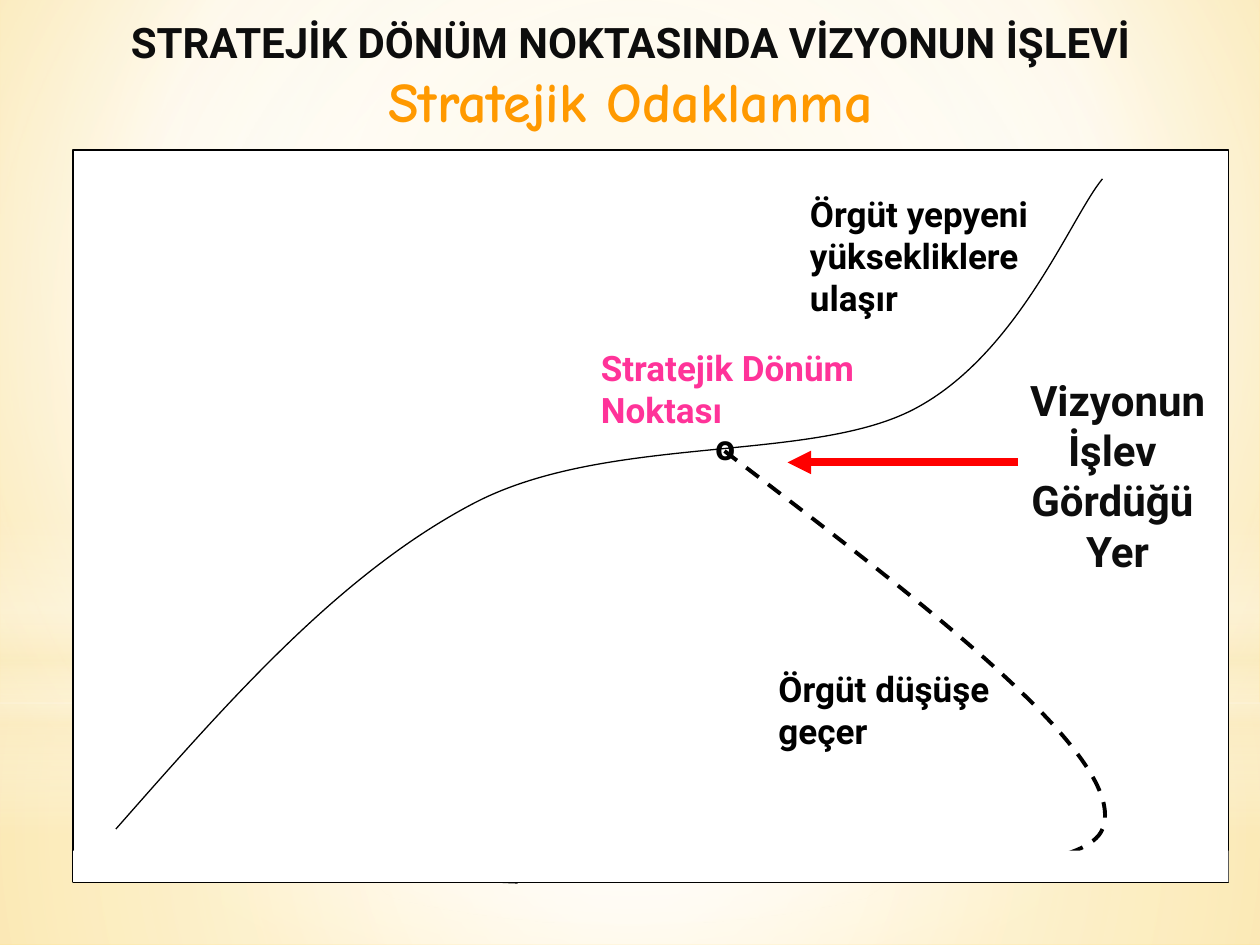
from lxml import etree
from pptx import Presentation
from pptx import util as u
from pptx.dml.color import RGBColor
from pptx.enum import dml, shapes, text
from pptx.oxml.ns import qn

BLACK = RGBColor(0x00, 0x00, 0x00)
INK = RGBColor(0x0D, 0x0D, 0x0D)
WHITE = RGBColor(0xFF, 0xFF, 0xFF)
CREAM = RGBColor(0xFB, 0xEE, 0xC9)
PALE_GOLD = RGBColor(0xFE, 0xEA, 0xB3)
GOLD = RGBColor(0xFF, 0xD9, 0x6C)
ORANGE = RGBColor(0xFF, 0x99, 0x00)
PINK = RGBColor(0xFF, 0x33, 0x99)
RED = RGBColor(0xFF, 0x00, 0x00)

WIDTH, HEIGHT = 10, 7.5
HORIZON = 5.58
CENTRE = (50, 50, 50, 50)
RECTANGLE, OVAL = shapes.MSO_SHAPE.RECTANGLE, shapes.MSO_SHAPE.OVAL
LEFT, CENTER = text.PP_ALIGN.LEFT, text.PP_ALIGN.CENTER

BACKGROUND = [(0, PALE_GOLD, 100), (60, WHITE, 100), (100, GOLD, 100)]
GLOWS = [
    (RECTANGLE, (0, HORIZON, WIDTH, HEIGHT - HORIZON), CENTRE,
     [(0, WHITE, 91), (37, WHITE, 76), (100, CREAM, 79)]),
    (RECTANGLE, (0, 0, WIDTH, HORIZON), CENTRE,
     [(0, WHITE, 89), (48, WHITE, 62), (100, CREAM, 79)]),
    (RECTANGLE, (0, 4.12, WIDTH, 2.5), None,
     [(0, WHITE, 0), (29, WHITE, 30), (45, CREAM, 40),
      (55, WHITE, 26), (65, CREAM, 60), (100, WHITE, 0)]),
    (OVAL, (0, 1.75, WIDTH, HORIZON), CENTRE, [(0, WHITE, 100), (56, WHITE, 0)]),
]

PANEL = (0.58, 1.19, 9.17, 5.81)
PANEL_FOOT = (0.58, 6.75, 9.17, 0.25)
RISE = [(0.92, 6.58), (1.81, 5.57), (2.69, 4.56), (3.75, 4), (4.81, 3.44),
        (6.42, 3.68), (7.25, 3.25), (8.08, 2.82), (8.5, 1.72), (8.75, 1.42)]
DECLINE = [(5.75, 3.58), (7.36, 4.81), (8.97, 6.03), (8.75, 6.58), (8.53, 7.14),
           (5.18, 6.85), (4.42, 6.92), (3.65, 6.99), (3.91, 6.99), (4.17, 7)]
CURVES = [(RISE, 0.75, None), (DECLINE, 2.25, dml.MSO_LINE.DASH)]
ARROW = [(8.08, 3.67), (6.25, 3.67)]

TITLE_BOX = (0.17, 0.08, 9.67, 1.04)
TITLE = [
    ("STRATEJİK DÖNÜM NOKTASINDA VİZYONUN İŞLEVİ", "Roboto", 24, INK),
    ("Stratejik Odaklanma", "Comic Neue", 32, ORANGE),
]
LABELS = [
    ((6.08, 5.25, 2.06, 0.77), ["Örgüt düşüşe", "geçer"], 20, BLACK, LEFT),
    ((4.67, 2.7, 2.57, 0.77), ["Stratejik Dönüm", "Noktası"], 20, PINK, LEFT),
    ((6.33, 1.48, 2.17, 1.1), ["Örgüt yepyeni", "yüksekliklere", "ulaşır"],
     20, BLACK, LEFT),
    ((5.58, 3.33, 0.37, 0.43), ["o"], 20, BLACK, LEFT),
    ((7.99, 2.92, 1.76, 1.72), ["Vizyonun", "İşlev ", "Gördüğü ", "Yer"],
     24, INK, CENTER),
]


def inches(values):
    return [u.Inches(value) for value in values]


def add_node(parent, tag, **attributes):
    node = etree.SubElement(parent, qn(tag))
    for key, value in attributes.items():
        node.set(key, str(value))
    return node


def set_gradient(fill, element, stops, focus):
    fill.gradient()
    gradient = element.find(".//" + qn("a:gradFill"))
    for child in list(gradient):
        gradient.remove(child)
    stop_list = add_node(gradient, "a:gsLst")
    for position, color, opacity in stops:
        stop = add_node(stop_list, "a:gs", pos=position * 1000)
        tint = add_node(stop, "a:srgbClr", val=color)
        if opacity < 100:
            add_node(tint, "a:alpha", val=opacity * 1000)
    if focus is None:
        add_node(gradient, "a:lin", ang=90 * 60000, scaled=0)
    else:
        circle = add_node(gradient, "a:path", path="circle")
        sides = {side: share * 1000 for side, share in zip("ltrb", focus)}
        add_node(circle, "a:fillToRect", **sides)


def set_line(shape, color, width, dash=None):
    shape.line.color.rgb = color
    shape.line.width = u.Pt(width)
    if dash:
        shape.line.dash_style = dash


def add_block(slide, kind, box):
    shape = slide.shapes.add_shape(kind, *inches(box))
    shape.shadow.inherit = False
    shape.line.fill.background()
    shape.fill.solid()
    shape.fill.fore_color.rgb = WHITE
    return shape


def add_curve(slide, points, width, dash):
    builder = slide.shapes.build_freeform(*inches(points[0]))
    builder.add_line_segments([inches(point) for point in points[1:]], close=False)
    shape = builder.convert_to_shape()
    segments = list(shape.element.iter(qn("a:lnTo")))
    outline = segments[0].getparent()
    for first in range(0, len(segments), 3):
        bend = add_node(outline, "a:cubicBezTo")
        for segment in segments[first:first + 3]:
            bend.append(segment[0])
            outline.remove(segment)
    shape.shadow.inherit = False
    shape.fill.background()
    set_line(shape, BLACK, width, dash)


def add_text(slide, box, lines, alignment, wrap):
    frame = slide.shapes.add_textbox(*inches(box)).text_frame
    frame.word_wrap = wrap
    frame.auto_size = text.MSO_AUTO_SIZE.SHAPE_TO_FIT_TEXT
    for index, (words, font_name, size, color) in enumerate(lines):
        paragraph = frame.add_paragraph() if index else frame.paragraphs[0]
        paragraph.alignment = alignment
        run = paragraph.add_run()
        run.text = words
        run.font.color.rgb = color
        font_format = dict(name=font_name, size=u.Pt(size), bold=True)
        for key, value in font_format.items():
            setattr(run.font, key, value)


def add_arrow(slide, start, end):
    arrow = slide.shapes.add_connector(
        shapes.MSO_CONNECTOR.STRAIGHT, *inches(start + end))
    set_line(arrow, RED, 4.5)
    add_node(arrow.line._get_or_add_ln(), "a:tailEnd", type="triangle")
    add_node(arrow.element.spPr, "a:effectLst")


def main():
    presentation = Presentation()
    presentation.slide_width, presentation.slide_height = inches((WIDTH, HEIGHT))
    slide = presentation.slides.add_slide(presentation.slide_layouts[6])

    set_gradient(slide.background.fill, slide.element, BACKGROUND, (20, 10, 20, 60))
    for kind, box, focus, stops in GLOWS:
        glow = add_block(slide, kind, box)
        set_gradient(glow.fill, glow.element, stops, focus)

    add_text(slide, TITLE_BOX, TITLE, CENTER, True)
    set_line(add_block(slide, RECTANGLE, PANEL), BLACK, 0.75)
    for curve in CURVES:
        add_curve(slide, *curve)
    for box, lines, size, color, alignment in LABELS:
        rows = [(words, "Roboto", size, color) for words in lines]
        add_text(slide, box, rows, alignment, False)
    add_arrow(slide, *ARROW)
    add_block(slide, RECTANGLE, PANEL_FOOT)

    presentation.save("out.pptx")


if __name__ == "__main__":
    main()
